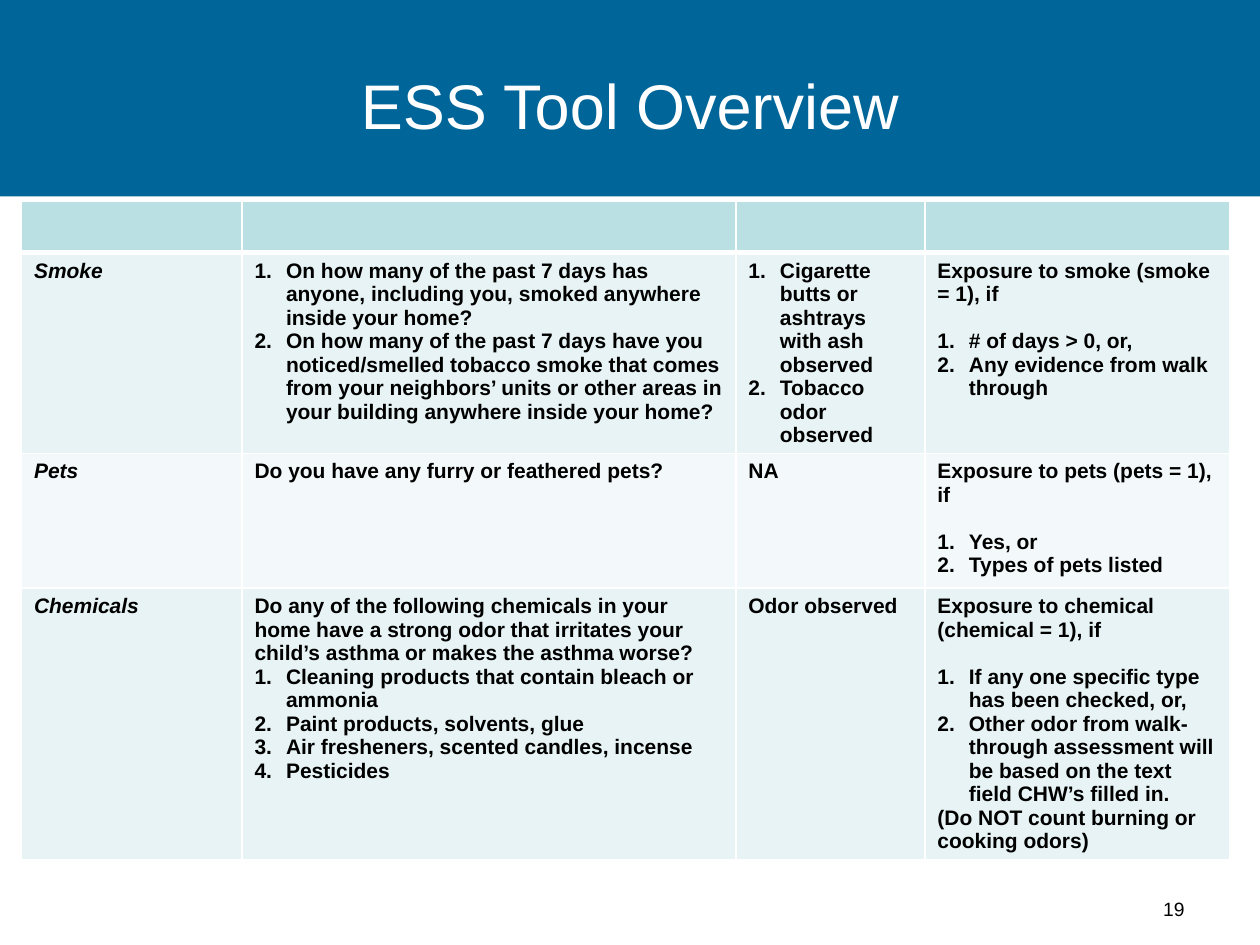
import pptx
import pptx.dml.color
import pptx.enum.shapes
import pptx.enum.text
import pptx.oxml.ns
import pptx.util
from lxml import etree
from pptx.util import Inches, Pt

TITLE = "ESS Tool Overview"
PAGE_NUMBER = "19"
COLUMN_WIDTHS = [1.75, 3.92, 1.5, 2.42]
ROW_HEIGHTS = [0.37, 1.59, 1.07, 2.15]
ROW_FILLS = ["BBE0E3", "E7F3F4", "F3F9FA", "E7F3F4"]
LINE_GAP = 13.4
ROWS = [
    [{}, {}, {}, {}],
    [
        {"lead": "Smoke"},
        {"steps": [
            "On how many of the past 7 days has anyone, including you, smoked anywhere inside your home?",
            "On how many of the past 7 days have you noticed/smelled tobacco smoke that comes from "
            "your neighbors’ units or other areas in your building anywhere inside your home?",
        ]},
        {"steps": ["Cigarette butts or ashtrays with ash observed", "Tobacco odor observed"]},
        {"lead": "Exposure to smoke (smoke = 1), if", "gap": LINE_GAP,
         "steps": ["# of days > 0, or,", "Any evidence from walk through"]},
    ],
    [
        {"lead": "Pets"},
        {"lead": "Do you have any furry or feathered pets?"},
        {"lead": "NA"},
        {"lead": "Exposure to pets (pets = 1), if", "gap": LINE_GAP,
         "steps": ["Yes, or", "Types of pets listed"]},
    ],
    [
        {"lead": "Chemicals"},
        {"lead": "Do any of the following chemicals in your home have a strong odor that "
                 "irritates your child’s asthma or makes the asthma worse?",
         "steps": ["Cleaning products that contain bleach or ammonia", "Paint products, solvents, glue",
                   "Air fresheners, scented candles, incense", "Pesticides"]},
        {"lead": "Odor observed"},
        {"lead": "Exposure to chemical (chemical = 1), if", "gap": LINE_GAP,
         "steps": ["If any one specific type has been checked, or,",
                   "Other odor from walk-through assessment will be based on the text field CHW’s filled in."],
         "note": "(Do NOT count burning or cooking odors)"},
    ],
]


def color(value):
    """Turn a hex string into a colour."""
    return pptx.dml.color.RGBColor.from_string(value)


def style(paragraph, size, value="000000", bold=False, italic=False):
    """Set the font of a whole paragraph."""
    font = paragraph.font
    font.name, font.size, font.bold, font.italic = "Arial", Pt(size), bold, italic
    font.color.rgb = color(value)


def number(paragraph):
    """Make a paragraph an item of a numbered list."""
    properties = paragraph._p.get_or_add_pPr()
    properties.set("marL", str(Inches(0.25)))
    properties.set("indent", str(Inches(-0.25)))
    bullet = etree.Element(pptx.oxml.ns.qn("a:buAutoNum"), type="arabicPeriod")
    fonts = properties.find(pptx.oxml.ns.qn("a:defRPr"))
    fonts.addprevious(bullet)


def border(cell, bottom):
    """Draw white borders around a cell."""
    properties = cell._tc.get_or_add_tcPr()
    for side, width in [("L", 1), ("R", 1), ("T", 1), ("B", bottom)]:
        line = etree.SubElement(properties, pptx.oxml.ns.qn(f"a:ln{side}"), w=str(Pt(width)))
        fill = etree.SubElement(line, pptx.oxml.ns.qn("a:solidFill"))
        etree.SubElement(fill, pptx.oxml.ns.qn("a:srgbClr"), val="FFFFFF")


def fill_cell(cell, content, italic):
    """Write the lead, numbered steps and note of a cell."""
    items = [(content.get("lead"), False)]
    items += [(step, True) for step in content.get("steps", [])]
    items += [(content.get("note"), False)]
    items = [item for item in items if item[0]]
    for index, (text, numbered) in enumerate(items):
        paragraph = cell.text_frame.add_paragraph() if index else cell.text_frame.paragraphs[0]
        paragraph.text = text
        style(paragraph, 12, bold=True, italic=italic)
        if numbered:
            number(paragraph)
        elif index == 0 and "gap" in content:
            paragraph.space_after = Pt(content["gap"])


def add_band(slide):
    """Put the blue band behind the title."""
    band = slide.shapes.add_shape(
        pptx.enum.shapes.MSO_SHAPE.RECTANGLE, 0, 0, Inches(10.02), Inches(1.56))
    band.shadow.inherit = False
    band.fill.solid()
    band.fill.fore_color.rgb = color("006699")
    band.line.fill.background()
    slide.shapes._spTree.insert(2, band._element)


def add_title(slide):
    """Write the title in its placeholder."""
    title = slide.shapes.title
    title.left, title.top, title.width, title.height = map(Inches, (0.5, 0.22, 9, 1.22))
    title.text_frame.text = TITLE
    title.text_frame.vertical_anchor = pptx.enum.text.MSO_ANCHOR.MIDDLE
    paragraph = title.text_frame.paragraphs[0]
    paragraph.alignment = pptx.enum.text.PP_ALIGN.CENTER
    style(paragraph, 36, "FFFFFF")


def add_overview(slide):
    """Build the table of exposures."""
    table = slide.shapes.add_table(
        len(ROWS), len(COLUMN_WIDTHS), Inches(0.17), Inches(1.6),
        Inches(sum(COLUMN_WIDTHS)), Inches(sum(ROW_HEIGHTS))).table
    for column, width in zip(table.columns, COLUMN_WIDTHS):
        column.width = Inches(width)
    for row_index, contents in enumerate(ROWS):
        table.rows[row_index].height = Inches(ROW_HEIGHTS[row_index])
        for column_index, content in enumerate(contents):
            cell = table.cell(row_index, column_index)
            border(cell, 1 if row_index else 3)
            cell.fill.solid()
            cell.fill.fore_color.rgb = color(ROW_FILLS[row_index])
            fill_cell(cell, content, column_index == 0)


def add_page_number(slide):
    """Write the page number at the lower right."""
    box = slide.shapes.add_textbox(*map(Inches, (7.17, 6.83, 2.33, 0.52)))
    box.text_frame.word_wrap = True
    box.text_frame.vertical_anchor = pptx.enum.text.MSO_ANCHOR.BOTTOM
    paragraph = box.text_frame.paragraphs[0]
    paragraph.text = PAGE_NUMBER
    paragraph.alignment = pptx.enum.text.PP_ALIGN.RIGHT
    style(paragraph, 11)


def main():
    """Build and save the slide."""
    presentation = pptx.Presentation()
    presentation.slide_width, presentation.slide_height = Inches(10), Inches(7.5)
    slide = presentation.slides.add_slide(presentation.slide_layouts[5])
    add_band(slide)
    add_title(slide)
    add_overview(slide)
    add_page_number(slide)
    presentation.save("out.pptx")


if __name__ == "__main__":
    main()
